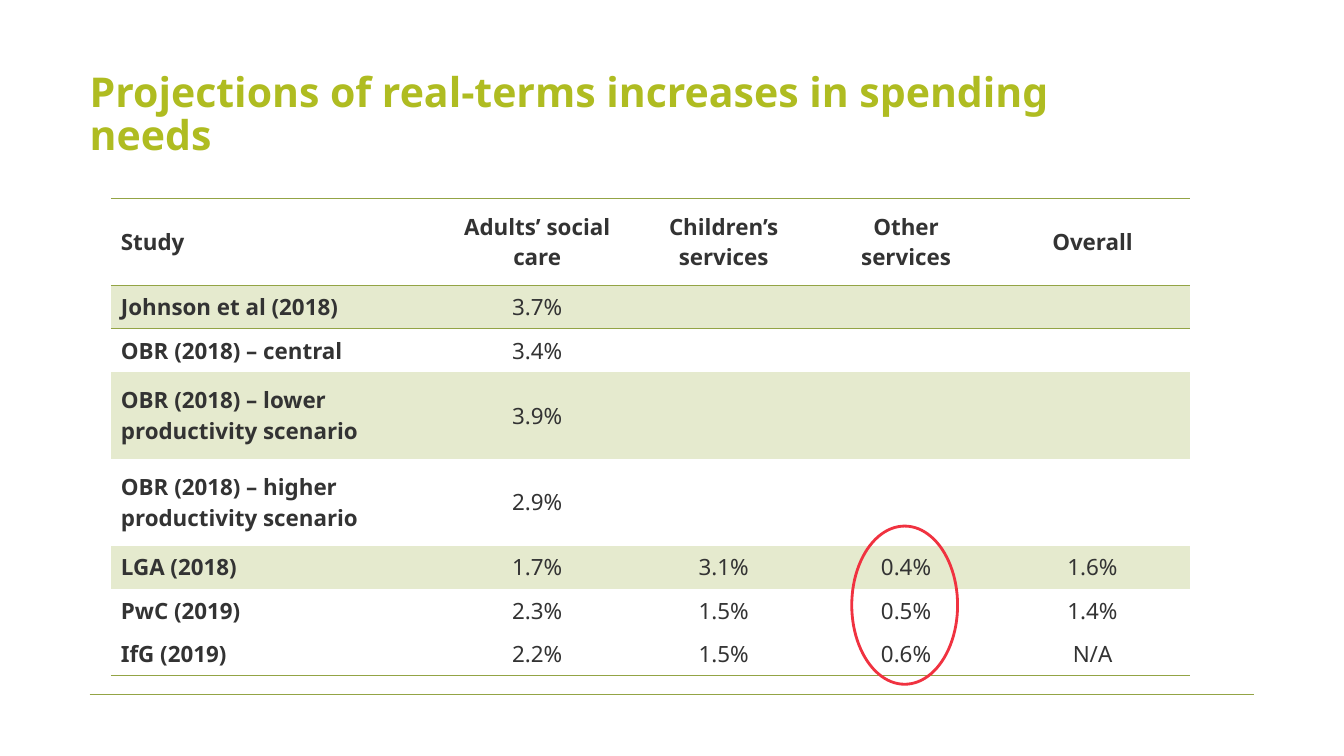
from lxml import etree
from pptx import Presentation, util as u
from pptx.dml.color import RGBColor
from pptx.enum import shapes, text
from pptx.oxml.ns import qn

TITLE = "Projections of real-terms increases in spending needs"
HEADER = ["Study", "Adults’ social care", "Children’s services", "Other services", "Overall"]
STUDIES = [
    ["Johnson et al (2018)", "3.7%", "", "", ""],
    ["OBR (2018) – central", "3.4%", "", "", ""],
    ["OBR (2018) – lower productivity scenario", "3.9%", "", "", ""],
    ["OBR (2018) – higher productivity scenario", "2.9%", "", "", ""],
    ["LGA (2018)", "1.7%", "3.1%", "0.4%", "1.6%"],
    ["PwC (2019)", "2.3%", "1.5%", "0.5%", "1.4%"],
    ["IfG (2019)", "2.2%", "1.5%", "0.6%", "N/A"],
]
SHADED_ROWS = {1, 3, 5}
TALL_ROWS = {0, 3, 4}
COL_WIDTHS = [238.3, 132.5, 133.9, 126.7, 139.7]
ROW_HEIGHT = 31
TABLE_LEFT, TABLE_TOP = 79.2, 141.8
NO_GRID_STYLE = "{2D5ABB26-0587-4C30-8999-92F81FD0307C}"

THEME = {
    "font": "Noto Sans", "title_size": 29.3, "table_size": 16,
    "title": "AFBC21", "text": "333333", "rule": "93A445",
    "band": "E5EACE", "ring": "F03240",
}


def pt(*values):
    return [u.Pt(v) for v in values]


def color(name):
    return RGBColor.from_string(THEME[name])


def set_attrs(obj, values):
    for name, value in values.items():
        setattr(obj, name, value)


def write(tf, content, size, ink, bold, **layout):
    p = tf.paragraphs[0]
    set_attrs(p, layout)
    if content:
        p.add_run().text = content
    for font in [p.font] + [r.font for r in p.runs]:
        set_attrs(font, {"name": THEME["font"], "size": u.Pt(THEME[size]), "bold": bold})
        font.color.rgb = color(ink)


def add_border(cell, side):
    ln = etree.SubElement(cell._tc.get_or_add_tcPr(), qn(f"a:ln{side}"), w=str(u.Pt(1)))
    fill = etree.SubElement(ln, qn("a:solidFill"))
    etree.SubElement(fill, qn("a:srgbClr"), val=THEME["rule"])


def add_footer_rule(s):
    line = s.shapes.add_connector(shapes.MSO_CONNECTOR.STRAIGHT, *pt(64.1, 496.1, 895.7, 496.1))
    line.line.color.rgb = color("rule")
    line.line.width = u.Pt(0.75)
    etree.SubElement(line._element.spPr, qn("a:effectLst"))


def add_title(s):
    tf = s.shapes.add_textbox(*pt(64.1, 46.8, 687.6, 72)).text_frame
    set_attrs(tf, {"word_wrap": True, "vertical_anchor": text.MSO_ANCHOR.MIDDLE,
                   "margin_left": 0, "margin_right": 0, "margin_top": 0, "margin_bottom": 0})
    write(tf, TITLE, "title_size", "title", True, line_spacing=0.87)


def add_studies(s):
    rows = [HEADER] + STUDIES
    heights = [ROW_HEIGHT * (2 if i in TALL_ROWS else 1) for i in range(len(rows))]
    frame = s.shapes.add_table(len(rows), len(HEADER),
                               *pt(TABLE_LEFT, TABLE_TOP, sum(COL_WIDTHS), sum(heights)))
    table = frame.table
    set_attrs(table, {"first_row": False, "horz_banding": False})
    table._tbl.tblPr.find(qn("a:tableStyleId")).text = NO_GRID_STYLE
    for column, width in zip(table.columns, COL_WIDTHS):
        column.width = u.Pt(width)
    borders = {0: "TB", 1: "T", len(rows) - 1: "B"}
    for i, (row, height) in enumerate(zip(rows, heights)):
        table.rows[i].height = u.Pt(height)
        for j, content in enumerate(row):
            cell = table.cell(i, j)
            set_attrs(cell, {"margin_left": u.Pt(7.2), "margin_right": u.Pt(7.2),
                             "margin_top": 0, "margin_bottom": 0,
                             "vertical_anchor": text.MSO_ANCHOR.MIDDLE})
            for side in borders.get(i, ""):
                add_border(cell, side)
            if i in SHADED_ROWS:
                cell.fill.solid()
                cell.fill.fore_color.rgb = color("band")
            else:
                cell.fill.background()
            write(cell.text_frame, content, "table_size", "text", i == 0 or j == 0,
                  alignment=text.PP_ALIGN.CENTER if j else text.PP_ALIGN.LEFT,
                  space_after=u.Pt(3 if i else 10))


def add_ring(s):
    ring = s.shapes.add_shape(shapes.MSO_SHAPE.OVAL, *pt(608.4, 375.8, 75.6, 113))
    ring.shadow.inherit = False
    ring.fill.background()
    ring.line.color.rgb = color("ring")
    ring.line.width = u.Pt(2)


def main():
    prs = Presentation()
    set_attrs(prs, {"slide_width": u.Pt(960), "slide_height": u.Pt(540)})
    s = prs.slides.add_slide(prs.slide_layouts[6])
    for add_part in (add_footer_rule, add_title, add_studies, add_ring):
        add_part(s)
    prs.save("out.pptx")


if __name__ == "__main__":
    main()
